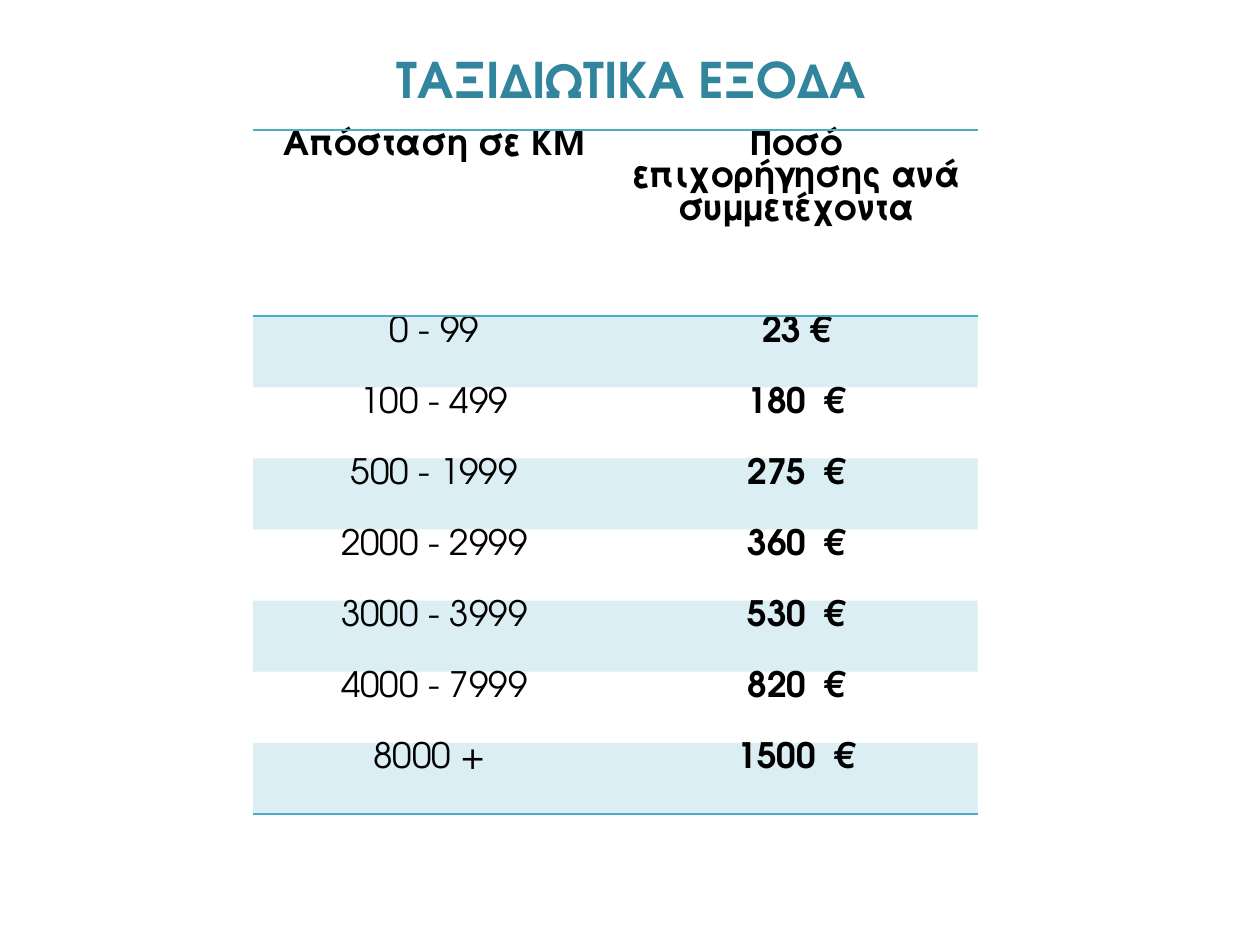
from lxml import etree
from pptx import Presentation
from pptx.dml.color import RGBColor
from pptx.enum import text
from pptx.oxml import ns
from pptx.util import Inches, Pt

FONT = "TeX Gyre Adventor"
TITLE_TEAL = RGBColor(0x31, 0x85, 0x9C)
AQUA = RGBColor(0x4B, 0xAC, 0xC6)
BLACK = RGBColor(0, 0, 0)
NO_STYLE = "{2D5ABB26-0587-4C30-8999-92F81FD0307C}"
HEADER_HEIGHT = Inches(1.48)
ROWS = [
    ("Απόσταση σε KM", "Ποσό επιχορήγησης ανά συμμετέχοντα"),
    ("0 - 99", "23 €"),
    ("100 - 499", "180  €"),
    ("500 - 1999", "275  €"),
    ("2000 - 2999", "360  €"),
    ("3000 - 3999", "530  €"),
    ("4000 - 7999", "820  €"),
    ("8000 + ", "1500  €"),
]


def write_text(frame, content, size=20, color=BLACK, bold=False, spacing=None):
    """Write one centred paragraph in the given format."""
    paragraph = frame.paragraphs[0]
    paragraph.alignment = text.PP_ALIGN.CENTER
    paragraph.line_spacing = spacing
    run = paragraph.add_run()
    run.text = content
    run.font.name = FONT
    run.font.size = Pt(size)
    run.font.bold = bold
    run.font.color.rgb = color


def add_border(cell, side):
    """Draw a one-point aqua line on a side of the cell, T or B."""
    properties = cell._tc.get_or_add_tcPr()
    line = etree.SubElement(properties, ns.qn(f"a:ln{side}"), w=str(Pt(1)))
    fill = etree.SubElement(line, ns.qn("a:solidFill"))
    etree.SubElement(fill, ns.qn("a:srgbClr"), val=str(AQUA))


def fill_band(cell):
    """Fill the cell with aqua at 20 percent opacity."""
    cell.fill.solid()
    cell.fill.fore_color.rgb = AQUA
    color = cell._tc.tcPr.find(".//" + ns.qn("a:srgbClr") + "[last()]")
    color = cell._tc.tcPr.find(ns.qn("a:solidFill")).find(ns.qn("a:srgbClr"))
    etree.SubElement(color, ns.qn("a:alpha"), val="20000")


def add_title(slide, left, top, width, height):
    """Place the slide title in the box."""
    title = slide.shapes.title
    title.left, title.top, title.width, title.height = left, top, width, height
    title.text_frame.vertical_anchor = text.MSO_ANCHOR.MIDDLE
    write_text(title.text_frame, "ΤΑΞΙΔΙΩΤΙΚΑ ΕΞΟΔΑ", size=28, color=TITLE_TEAL, bold=True)


def add_grant_table(slide, left, top, width, height):
    """Place the table of travel grants by distance in the box."""
    frame = slide.shapes.add_table(len(ROWS), 2, left, top, width, height)
    table = frame.table
    table._tbl.tblPr.find(ns.qn("a:tableStyleId")).text = NO_STYLE
    body_height = (height - HEADER_HEIGHT) // (len(ROWS) - 1)
    for row_index, values in enumerate(ROWS):
        is_header = row_index == 0
        table.rows[row_index].height = HEADER_HEIGHT if is_header else body_height
        for column_index, value in enumerate(values):
            cell = table.cell(row_index, column_index)
            cell.margin_top = cell.margin_bottom = 0
            cell.margin_left = cell.margin_right = Inches(0.08)
            write_text(cell.text_frame, value, bold=is_header or column_index == 1)
            if is_header:
                add_border(cell, "T")
            if is_header or row_index == len(ROWS) - 1:
                add_border(cell, "B")
            if row_index % 2:
                fill_band(cell)
            else:
                cell.fill.background()


def main():
    """Build the slide and save it."""
    presentation = Presentation()
    presentation.slide_width = Inches(10)
    presentation.slide_height = Inches(7.5)
    slide = presentation.slides.add_slide(presentation.slide_layouts[5])
    add_title(slide, Inches(0.51), Inches(0), Inches(9), Inches(1.25))
    add_grant_table(slide, Inches(2.01), Inches(1.03), Inches(5.75), Inches(5.43))
    presentation.save("out.pptx")


if __name__ == "__main__":
    main()
